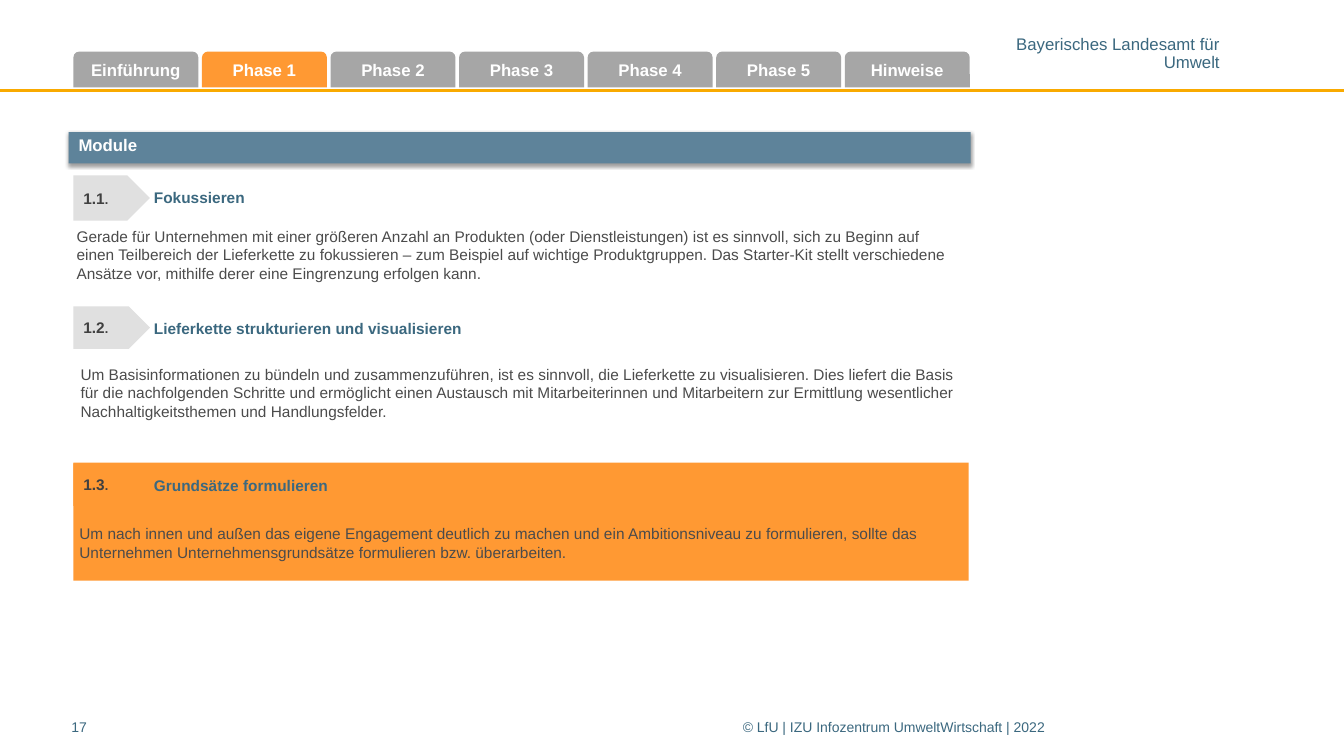
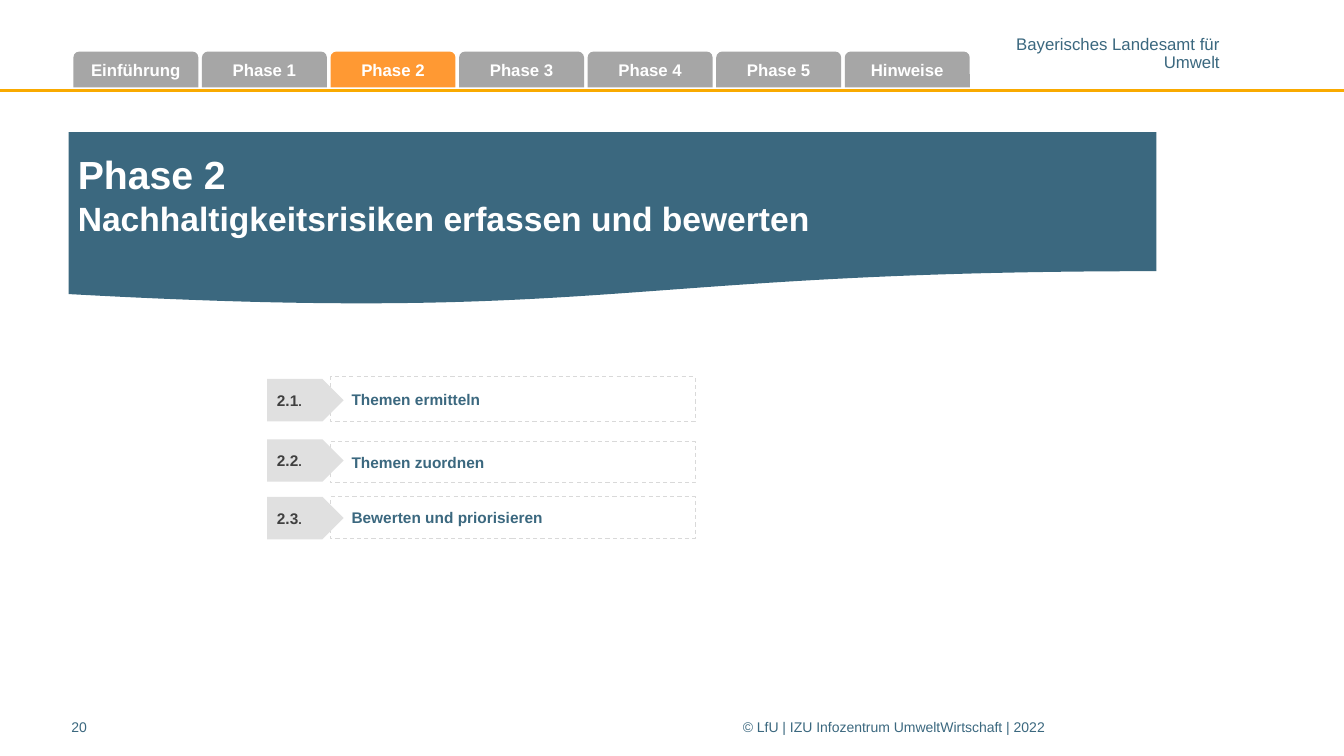
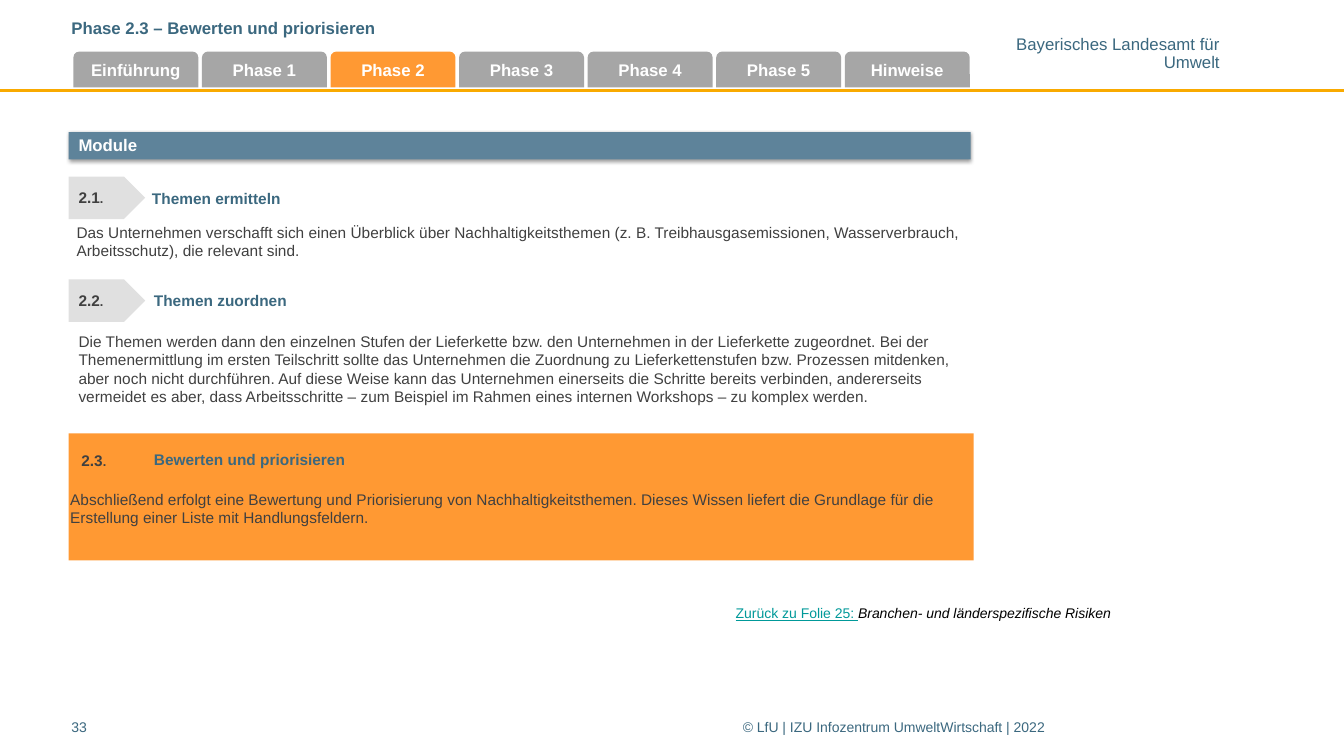
"""Build three slides of the supply chain starter kit."""
import lxml.etree
import pptx
import pptx.dml.color
import pptx.enum.dml
import pptx.enum.shapes
import pptx.enum.text
import pptx.oxml
import pptx.oxml.ns
import pptx.util

Cm = pptx.util.Cm
Pt = pptx.util.Pt
rgb = pptx.dml.color.RGBColor.from_string
SHAPE = pptx.enum.shapes.MSO_SHAPE
ANCHOR = pptx.enum.text.MSO_ANCHOR
ALIGN = pptx.enum.text.PP_ALIGN

BLUE, BAND, ORANGE = "3B687F", "5E839A", "FF9933"
TAB, CHEVRON, WHITE, DARK = "A6A6A6", "E0E0E0", "FFFFFF", "404040"
YELLOW, DASH, LINK, BLACK = "F9AA00", "D9D9D9", "009999", "000000"
TABS = ["Einführung", "Phase 1", "Phase 2", "Phase 3", "Phase 4", "Phase 5", "Hinweise"]
HEADING_INSETS = (0.53, 0.15, 0.28, 0.15)
FOOTER_INSETS = (0, 0.13, 0, 0.13)


def write(tf, text, size, colour, bold=False, anchor=ANCHOR.TOP, align=ALIGN.LEFT,
          insets=(0.25, 0.13, 0.25, 0.13)):
    tf.word_wrap = True
    tf.auto_size = pptx.enum.text.MSO_AUTO_SIZE.NONE
    tf.vertical_anchor = anchor
    tf.margin_left, tf.margin_top, tf.margin_right, tf.margin_bottom = map(Cm, insets)
    for i, line in enumerate(text.split("\n")):
        p = tf.add_paragraph() if i else tf.paragraphs[0]
        p.alignment = align
        p.add_run().text = line
        p.font.name = "Arial"
        p.font.size = Pt(size)
        p.font.bold = bold
        p.font.color.rgb = rgb(colour)
    return tf


def box(s, kind, at, fill=None):
    sp = s.shapes.add_shape(kind, *map(Cm, at))
    sp.shadow.inherit = False
    sp.line.fill.background()
    if fill:
        sp.fill.solid()
        sp.fill.fore_color.rgb = rgb(fill)
    else:
        sp.fill.background()
    return sp


prs = pptx.Presentation()
prs.slide_width, prs.slide_height = Cm(33.87), Cm(19.05)

slides = []
for number, active, layout in [("17", "Phase 1", 6), ("20", "Phase 2", 5), ("33", "Phase 2", 5)]:
    s = prs.slides.add_slide(prs.slide_layouts[layout])
    slides.append(s)
    rule = s.shapes.add_connector(pptx.enum.shapes.MSO_CONNECTOR.STRAIGHT,
                                  0, Cm(2.29), prs.slide_width, Cm(2.29))
    rule.line.color.rgb = rgb(YELLOW)
    rule.line.width = Pt(2)
    lxml.etree.SubElement(rule._element.spPr, pptx.oxml.ns.qn("a:effectLst"))
    agency = s.shapes.add_textbox(Cm(25.58), Cm(0.94), Cm(5.16), Cm(0.86))
    tf = write(agency.text_frame, "Bayerisches Landesamt für\nUmwelt", 12, BLUE,
               align=ALIGN.RIGHT, insets=(0, 0, 0, 0))
    tf.word_wrap = False
    for p in tf.paragraphs:
        p.line_spacing = 0.85
    for left, width, text in [(1.8, 1.78, number),
                              (18.72, 13.61, "© LfU | IZU Infozentrum UmweltWirtschaft | 2022")]:
        footer = s.shapes.add_textbox(Cm(left), Cm(17.98), Cm(width), Cm(0.79))
        write(footer.text_frame, text, 10, BLUE, insets=FOOTER_INSETS)
    for i, name in enumerate(TABS):
        sp = box(s, SHAPE.ROUND_2_SAME_RECTANGLE, (1.85 + 3.24 * i, 1.3, 3.15, 0.9),
                 ORANGE if name == active else TAB)
        write(sp.text_frame, name, 12, WHITE, True, ANCHOR.MIDDLE, ALIGN.CENTER,
              (0.1, 0.13, 0.1, 0.13))

focus, overview, rating = slides

module_slides = [
    (focus, 0.79, (1.85, 11.66, 22.56, 2.97), "4B4B4B", [
        ("1.1", (1.85, 4.42, 1.93, 1.14), (3.35, 4.42), "Fokussieren", (1.68, 5.59, 22.73, 1.68),
         "Gerade für Unternehmen mit einer größeren Anzahl an Produkten (oder Dienstleistungen) "
         "ist es sinnvoll, sich zu Beginn auf einen Teilbereich der Lieferkette zu fokussieren – "
         "zum Beispiel auf wichtige Produktgruppen. Das Starter-Kit stellt verschiedene Ansätze "
         "vor, mithilfe derer eine Eingrenzung erfolgen kann."),
        ("1.2", (1.85, 7.72, 1.93, 1.07), (3.35, 7.72),
         "Lieferkette strukturieren und visualisieren", (1.78, 9.07, 22.63, 3.25),
         "Um Basisinformationen zu bündeln und zusammenzuführen, ist es sinnvoll, die Lieferkette "
         "zu visualisieren. Dies liefert die Basis für die nachfolgenden Schritte und ermöglicht "
         "einen Austausch mit Mitarbeiterinnen und Mitarbeitern zur Ermittlung wesentlicher "
         "Nachhaltigkeitsthemen und Handlungsfelder."),
        ("1.3", (1.85, 11.68, 1.93, 1.07), (3.35, 11.68), "Grundsätze formulieren",
         (1.75, 13.08, 22.73, 1.45),
         "Um nach innen und außen das eigene Engagement deutlich zu machen und ein "
         "Ambitionsniveau zu formulieren, sollte das Unternehmen Unternehmensgrundsätze "
         "formulieren bzw. überarbeiten."),
    ]),
    (rating, 0.69, (1.73, 10.92, 22.81, 3.2), DARK, [
        ("2.1", (1.73, 4.45, 1.93, 1.07), (3.3, 4.45), "Themen ermitteln",
         (1.68, 5.49, 22.78, 1.19),
         "Das Unternehmen verschafft sich einen Überblick über Nachhaltigkeitsthemen (z. B. "
         "Treibhausgasemissionen, Wasserverbrauch, Arbeitsschutz), die relevant sind."),
        ("2.2", (1.73, 7.04, 1.93, 1.07), (3.35, 7.01), "Themen zuordnen",
         (1.73, 8.23, 22.81, 2.13),
         "Die Themen werden dann den einzelnen Stufen der Lieferkette bzw. den Unternehmen in der "
         "Lieferkette zugeordnet. Bei der Themenermittlung im ersten Teilschritt sollte das "
         "Unternehmen die Zuordnung zu Lieferkettenstufen bzw. Prozessen mitdenken, aber noch "
         "nicht durchführen. Auf diese Weise kann das Unternehmen einerseits die Schritte bereits "
         "verbinden, andererseits vermeidet es aber, dass Arbeitsschritte – zum Beispiel im Rahmen "
         "eines internen Workshops – zu komplex werden."),
        ("2.3", (1.8, 11.07, 1.93, 1.07), (3.35, 11.02), "Bewerten und priorisieren",
         (1.52, 12.22, 22.94, 1.19),
         "Abschließend erfolgt eine Bewertung und Priorisierung von Nachhaltigkeitsthemen. Dieses "
         "Wissen liefert die Grundlage für die Erstellung einer Liste mit Handlungsfeldern."),
    ]),
]

chevrons = []
for s, band_height, highlight, body_colour, modules in module_slides:
    box(s, SHAPE.RECTANGLE, highlight, ORANGE)
    band = box(s, SHAPE.RECTANGLE, (1.73, 3.33, 22.73, band_height), BAND)
    tf = write(band.text_frame, "Module", 12, WHITE, True)
    tf.paragraphs[0].line_spacing = Pt(12.8)
    effects = band._element.spPr.find(pptx.oxml.ns.qn("a:effectLst"))
    effects.append(pptx.oxml.parse_xml(
        f'<a:outerShdw {pptx.oxml.ns.nsdecls("a")} blurRad="{Pt(3.1)}" dist="{Pt(1.6)}" '
        'dir="5400000" algn="t" rotWithShape="0"><a:srgbClr val="000000">'
        '<a:alpha val="38000"/></a:srgbClr></a:outerShdw>'))
    for number, chevron_at, (left, top), heading, body_at, body in modules:
        sp = s.shapes.add_textbox(*map(Cm, body_at))
        write(sp.text_frame, body, 11, body_colour)
        sp = s.shapes.add_textbox(Cm(left), Cm(top), Cm(21.1), Cm(1.12))
        write(sp.text_frame, heading, 11, BLUE, True, ANCHOR.MIDDLE, insets=HEADING_INSETS)
        current = number == modules[-1][0]
        chevrons.append((s, number, chevron_at, ORANGE if current else CHEVRON))

for number, heading, top, height, chevron_top in [
        ("2.1", "Themen ermitteln", 9.5, 1.12, 9.55),
        ("2.2", "Themen zuordnen", 11.13, 1.04, 11.07),
        ("2.3", "Bewerten und priorisieren", 12.52, 1.04, 12.52)]:
    sp = box(overview, SHAPE.RECTANGLE, (8.33, top, 9.19, height))
    sp.line.color.rgb = rgb(DASH)
    sp.line.width = Pt(0.75)
    sp.line.dash_style = pptx.enum.dml.MSO_LINE.DASH
    write(sp.text_frame, heading, 11, BLUE, True, ANCHOR.MIDDLE, insets=HEADING_INSETS)
    chevrons.append((overview, number, (6.73, chevron_top, 1.93, 1.07), CHEVRON))

for s, number, at, fill in chevrons:
    sp = box(s, SHAPE.PENTAGON, at, fill)
    tf = write(sp.text_frame, number, 11, DARK, True, ANCHOR.MIDDLE)
    r = tf.paragraphs[0].add_run()
    r.text = "."
    r.font.size = Pt(9)

banner = box(overview, SHAPE.FLOWCHART_DOCUMENT, (1.73, 3.33, 27.41, 4.37), BLUE)
title = overview.shapes.title
title.left, title.top, title.width, title.height = Cm(1.73), Cm(3.66), Cm(27.41), Cm(2.36)
tf = write(title.text_frame, "Phase 2\nNachhaltigkeitsrisiken erfassen und bewerten", 28, WHITE, True,
           insets=(0.23, 0.13, 0.23, 0.1))
tf.paragraphs[1].font.size = Pt(24)
banner._element.addnext(title._element)

title = rating.shapes.title
title.left, title.top, title.width, title.height = Cm(1.8), Cm(0.33), Cm(20.14), Cm(0.76)
tf = write(title.text_frame, "Phase 2.3 – Bewerten und priorisieren", 12, BLUE, True,
           ANCHOR.BOTTOM, insets=(0, 0.13, 0, 0.13))
tf.paragraphs[0].line_spacing = Pt(16)

back = rating.shapes.add_textbox(Cm(18.29), Cm(15.11), Cm(10.06), Cm(0.69))
tf = write(back.text_frame, "Zurück zu Folie 25: ", 10, BLACK)
tf.word_wrap = False
p = tf.paragraphs[0]
p.runs[0].font.underline = True
p.runs[0].font.color.rgb = rgb(LINK)
r = p.add_run()
r.text = "Branchen- und länderspezifische Risiken"
r.font.italic = True

prs.save("out.pptx")
